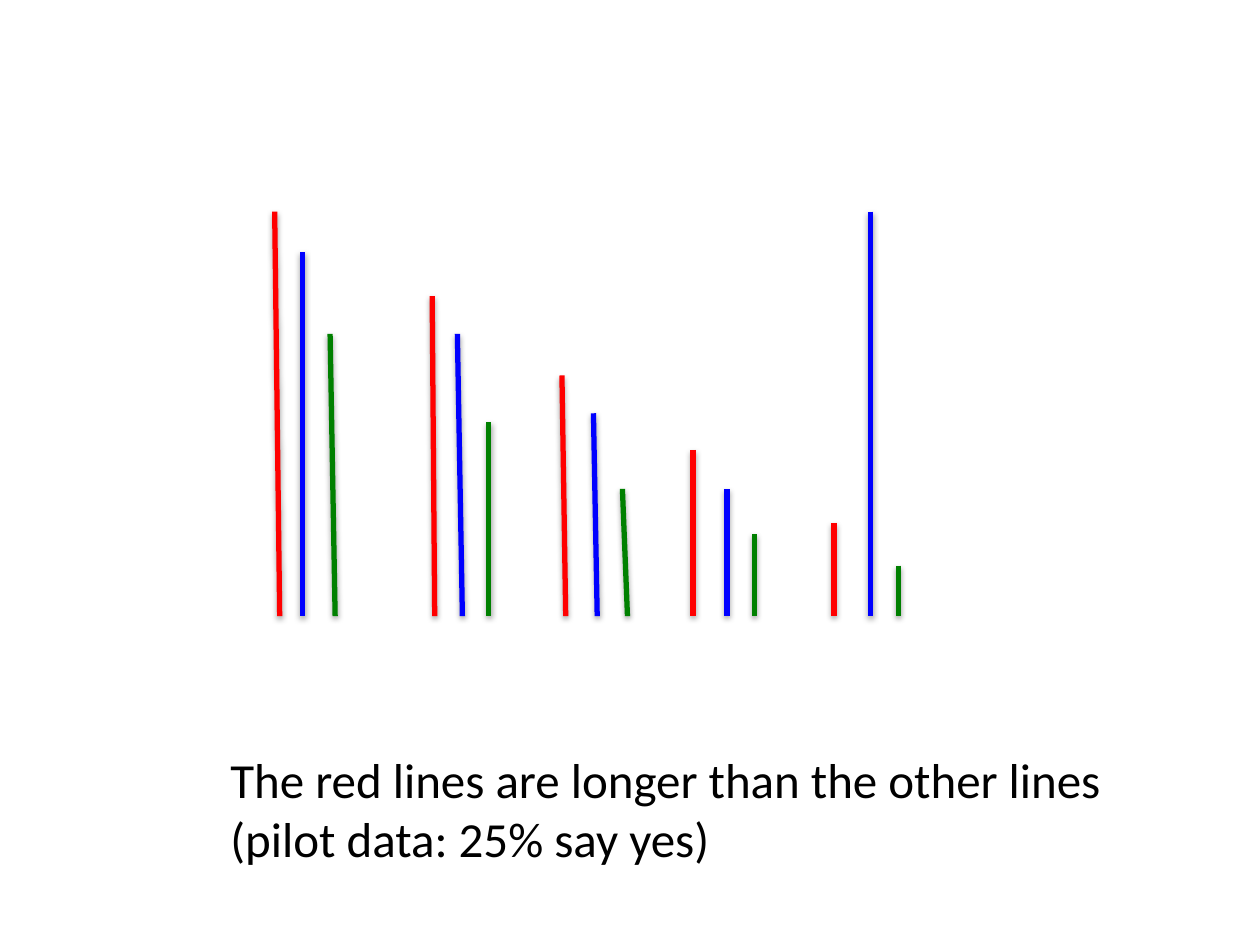
from lxml.etree import SubElement
from pptx import Presentation
from pptx.dml.color import RGBColor
from pptx.enum.shapes import MSO_CONNECTOR as Connector
from pptx.enum.text import MSO_AUTO_SIZE as AutoSize
from pptx.oxml.ns import qn
from pptx.util import Inches, Pt

RED = RGBColor(0xFF, 0x00, 0x00)
BLUE = RGBColor(0x00, 0x00, 0xFF)
GREEN = RGBColor(0x00, 0x80, 0x00)
BLACK = RGBColor(0x00, 0x00, 0x00)

BASELINE = 4.89

# Each line: x at the top, y at the top, x on the baseline
RED_LINES = [(2.18, 1.68, 2.22), (3.43, 2.35, 3.45), (4.46, 2.98, 4.49),
             (5.5, 3.57, 5.5), (6.62, 4.15, 6.62)]
BLUE_LINES = [(2.4, 2, 2.4), (3.63, 2.65, 3.67), (4.71, 3.28, 4.74),
              (5.77, 3.88, 5.77), (6.91, 1.68, 6.91)]
GREEN_LINES = [(2.62, 2.65, 2.66), (3.88, 3.35, 3.88), (4.94, 3.88, 4.98),
               (5.99, 4.24, 5.99), (7.13, 4.49, 7.13)]


class PageBuilder:
    font_name = "Calibri"
    font_size = Pt(28)
    line_width = Pt(3)

    def __init__(self, page):
        self.page = page

    def line(self, top_x, top_y, bottom_x, color):
        line = self.page.shapes.add_connector(
            Connector.STRAIGHT, Inches(top_x), Inches(top_y),
            Inches(bottom_x), Inches(BASELINE))
        line.line.color.rgb = color
        line.line.width = self.line_width
        self.shadow(line)

    def shadow(self, line):
        effects = SubElement(line._element.spPr, qn("a:effectLst"))
        outer = SubElement(effects, qn("a:outerShdw"), blurRad=str(Pt(3.15)),
                           dist=str(Pt(1.57)), dir="5400000", rotWithShape="0")
        shade = SubElement(outer, qn("a:srgbClr"), val=str(BLACK))
        SubElement(shade, qn("a:alpha"), val="38000")

    def text(self, left, top, width, height, lines):
        box = self.page.shapes.add_textbox(
            Inches(left), Inches(top), Inches(width), Inches(height))
        frame = box.text_frame
        frame.word_wrap = True
        frame.auto_size = AutoSize.SHAPE_TO_FIT_TEXT
        frame.text = "\n".join(lines)
        for para in frame.paragraphs:
            para.font.name = self.font_name
            para.font.size = self.font_size
            para.font.color.rgb = BLACK


def main():
    deck = Presentation()
    deck.slide_width, deck.slide_height = Inches(10), Inches(7.5)
    builder = PageBuilder(deck.slides.add_slide(deck.slide_layouts[6]))

    # Five groups of red, blue and green lines
    for color, lines in ((RED, RED_LINES), (BLUE, BLUE_LINES), (GREEN, GREEN_LINES)):
        for top_x, top_y, bottom_x in lines:
            builder.line(top_x, top_y, bottom_x, color)

    # Statement to judge
    builder.text(1.73, 5.9, 7.29, 1.04,
                 ["The red lines are longer than the other lines",
                  "(pilot data: 25% say yes)"])

    deck.save("out.pptx")


if __name__ == "__main__":
    main()
